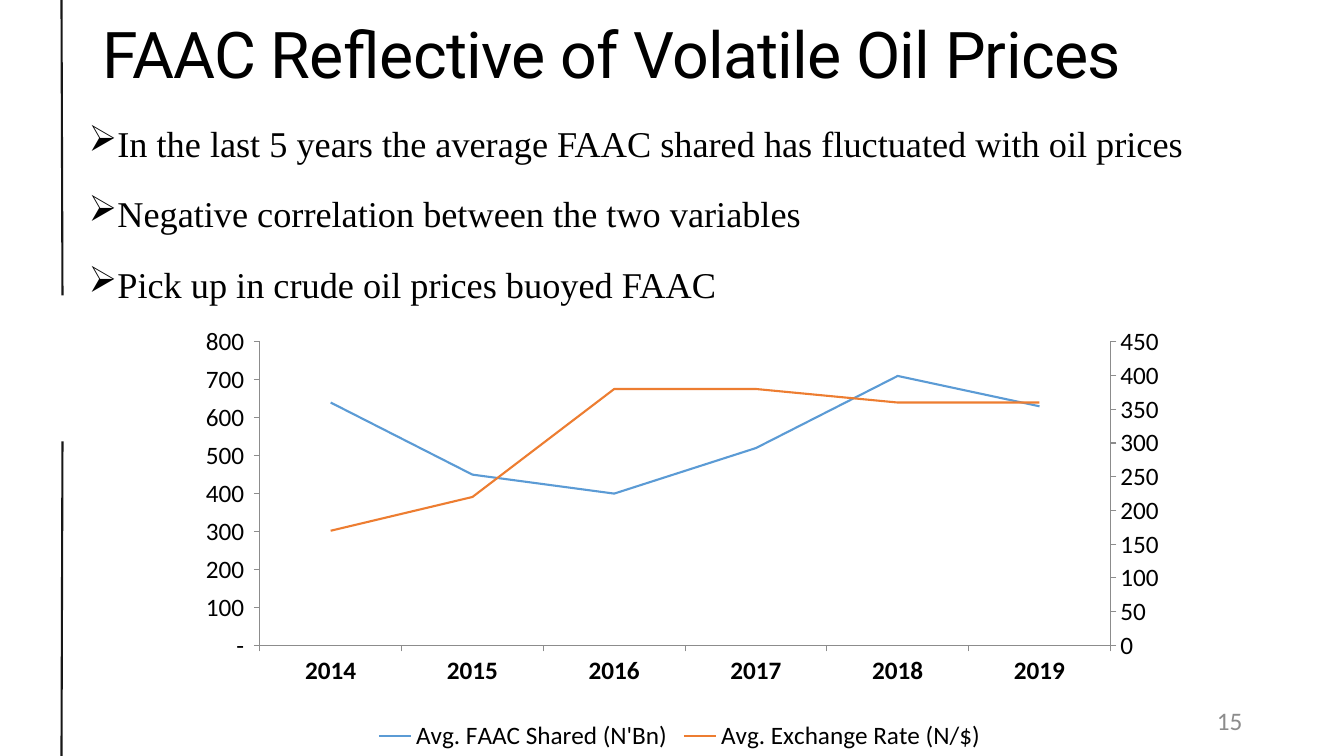
from copy import deepcopy
from lxml.etree import SubElement
from pptx import Presentation
from pptx.chart.data import CategoryChartData
from pptx.dml.color import RGBColor
from pptx.enum.chart import XL_CHART_TYPE, XL_LEGEND_POSITION, XL_TICK_MARK
from pptx.enum.shapes import MSO_CONNECTOR
from pptx.enum.text import MSO_ANCHOR, PP_ALIGN
from pptx.oxml import parse_xml
from pptx.oxml.ns import nsdecls, qn
from pptx.util import Inches, Pt

BLACK = RGBColor(0x00, 0x00, 0x00)
GREY = RGBColor(0x8C, 0x8C, 0x8C)
BLUE = RGBColor(0x5B, 0x9B, 0xD5)
ORANGE = RGBColor(0xED, 0x7D, 0x31)


def style(font, name, size, color):
    font.name = name
    font.size = Pt(size)
    font.color.rgb = color


def place(shape, left, top, width, height):
    shape.left, shape.top = Inches(left), Inches(top)
    shape.width, shape.height = Inches(width), Inches(height)


deck = Presentation()
deck.slide_width = Inches(13.33)
deck.slide_height = Inches(7.5)
slide = deck.slides.add_slide(deck.slide_layouts[5])
shapes = slide.shapes

for ends in ((0.62, 4.38, 0.61, 7.5), (0.61, 0, 0.62, 2.93)):
    rule = shapes.add_connector(MSO_CONNECTOR.STRAIGHT, *map(Inches, ends))
    rule.line.color.rgb = BLACK
    rule.line.width = Pt(1.5)
    tint = rule.line.fill._xPr.find(".//" + qn("a:srgbClr"))
    SubElement(tint, qn("a:alpha"), val="91000")
    SubElement(rule._element.spPr, qn("a:effectLst"))

title = shapes.title
place(title, 0.92, 0.16, 11.5, 0.84)
title.text_frame.text = "FAAC Reflective of Volatile Oil Prices"
title.text_frame.vertical_anchor = MSO_ANCHOR.MIDDLE
head = title.text_frame.paragraphs[0]
head.alignment = PP_ALIGN.LEFT
head.line_spacing = 0.85
style(head.font, "Roboto", 46, BLACK)
head.runs[0].font._element.set("spc", "-50")

points = (
    "In the last 5 years the average FAAC shared has fluctuated with oil prices",
    "Negative correlation between the two variables",
    "Pick up in crude oil prices buoyed FAAC",
)
body = shapes.add_textbox(Inches(0.78), Inches(1.02), Inches(12.16), Inches(2.19))
frame = body.text_frame
frame.word_wrap = True
for i, point in enumerate(points):
    para = frame.paragraphs[0] if i == 0 else frame.add_paragraph()
    para.text = point
    para.line_spacing = 1.3
    if i:
        para.space_before = Pt(10)
    props = para._p.get_or_add_pPr()
    props.set("marL", str(Inches(0.25)))
    props.set("indent", str(-Inches(0.25)))
    SubElement(props, qn("a:buChar"), char="➢")
    style(para.font, "Times New Roman", 25.9, BLACK)

data = CategoryChartData()
data.categories = [str(year) for year in range(2014, 2020)]
data.add_series("Avg. FAAC Shared (N'Bn)", (640, 450, 400, 520, 710, 630))
data.add_series("Avg. Exchange Rate (N/$)", (170, 220, 380, 380, 360, 360))
chart = shapes.add_chart(
    XL_CHART_TYPE.LINE, Inches(1.7), Inches(3.24), Inches(10.08), Inches(4.26), data
).chart
style(chart.font, "Calibri", 18, BLACK)
chart.has_title = False
chart.has_legend = True
chart.legend.position = XL_LEGEND_POSITION.BOTTOM
chart.legend.include_in_layout = False
chart.plots[0].vary_by_categories = False
for line, color in zip(chart.plots[0].series, (BLUE, ORANGE)):
    line.smooth = False
    line.format.line.color.rgb = color
    line.format.line.width = Pt(1.5)

years, left = chart.category_axis, chart.value_axis
for axis in (years, left):
    axis.has_major_gridlines = False
    axis.major_tick_mark = XL_TICK_MARK.OUTSIDE
    axis.minor_tick_mark = XL_TICK_MARK.NONE
    axis.format.line.color.rgb = GREY
    axis.format.line.width = Pt(0.75)
years.tick_labels.font.bold = True
left.minimum_scale, left.maximum_scale, left.major_unit = 0, 800, 100
labels = left.tick_labels
labels.number_format = '_-* #,##0_-;\\-* #,##0_-;_-* "-"_-;_-@_-'
labels.number_format_is_linked = False

area = chart._chartSpace.find(".//" + qn("c:plotArea"))
first = area.find(qn("c:lineChart"))
second = deepcopy(first)
first.remove(first.findall(qn("c:ser"))[1])
second.remove(second.find(qn("c:ser")))
first.addnext(second)
hidden, right = deepcopy(years._element), deepcopy(left._element)
left._element.addnext(right)
right.addnext(hidden)
ids = dict(zip([e.get("val") for e in first.findall(qn("c:axId"))], ("111", "222")))
for part in (second, hidden, right):
    for tag in ("c:axId", "c:crossAx"):
        for item in part.findall(qn(tag)):
            item.set("val", ids[item.get("val")])
hidden.find(qn("c:delete")).set("val", "1")
for tag, value in (
    ("c:axPos", "r"), ("c:crosses", "max"), ("c:majorUnit", "50"),
    ("c:scaling/c:max", "450"),
):
    right.find("/".join(qn(t) for t in tag.split("/"))).set("val", value)
right.find(qn("c:numFmt")).set("formatCode", "General")

for old in area.findall(qn("c:layout")):
    area.remove(old)
area.insert(0, parse_xml(
    f'<c:layout {nsdecls("c")}><c:manualLayout><c:layoutTarget val="inner"/>'
    '<c:xMode val="edge"/><c:yMode val="edge"/><c:x val="0.087"/><c:y val="0.032"/>'
    '<c:w val="0.837"/><c:h val="0.71"/></c:manualLayout></c:layout>'
))

page = shapes.add_textbox(Inches(9.42), Inches(6.95), Inches(3), Inches(0.4))
page.text_frame.word_wrap = True
page.text_frame.vertical_anchor = MSO_ANCHOR.MIDDLE
number = page.text_frame.paragraphs[0]
number.text = "15"
number.alignment = PP_ALIGN.RIGHT
style(number.font, "Calibri", 18, GREY)

deck.save("out.pptx")
